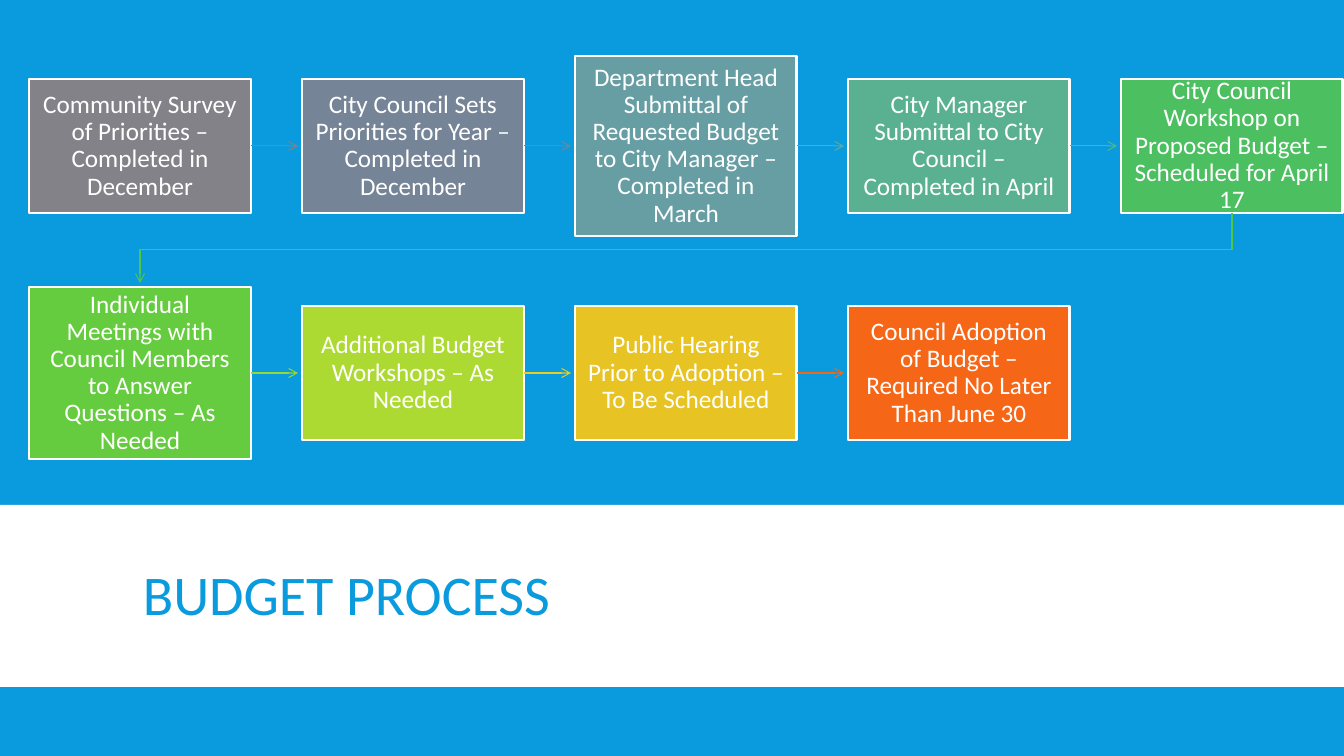
"""Build the budget process flow slide."""
from dataclasses import dataclass
from itertools import pairwise

from lxml.etree import SubElement
from pptx import Presentation
from pptx.dml.color import RGBColor
from pptx.enum.shapes import MSO_CONNECTOR, MSO_SHAPE
from pptx.enum.text import MSO_ANCHOR, PP_ALIGN
from pptx.oxml.ns import qn
from pptx.util import Pt

SCALE = 12192000 / 1344


@dataclass(frozen=True)
class Theme:
    font: str = "Calibri"
    blue: str = "099BDD"
    white: str = "FFFFFF"
    title_size: int = 40
    step_size: int = 18
    border: float = 2
    arrow: float = 0.75


def px(n):
    return round(n * SCALE)


def rgb(color):
    return RGBColor.from_string(color)


class Deck:
    """Hold the theme and the current slide, and draw each kind of element."""

    def __init__(self, prs, theme):
        self.theme = theme
        self.s = prs.slides.add_slide(prs.slide_layouts[6])
        fill = self.s.background.fill
        fill.solid()
        fill.fore_color.rgb = rgb(theme.blue)

    def set_text(self, sp, text, size, color, align, spacing):
        tf = sp.text_frame
        tf.word_wrap = True
        tf.vertical_anchor = MSO_ANCHOR.MIDDLE
        p = tf.paragraphs[0]
        p.text = text
        p.alignment = align
        p.line_spacing = spacing
        p.font.name = self.theme.font
        p.font.size = Pt(size)
        p.font.color.rgb = rgb(color)
        return tf

    def panel(self, x, y, w, h, color):
        sp = self.s.shapes.add_shape(MSO_SHAPE.RECTANGLE, px(x), px(y), px(w), px(h))
        sp.shadow.inherit = False
        sp.fill.solid()
        sp.fill.fore_color.rgb = rgb(color)
        sp.line.fill.background()
        return sp

    def step(self, x, y, w, h, color, text):
        t = self.theme
        sp = self.panel(x, y, w, h, color)
        sp.line.color.rgb = rgb(t.white)
        sp.line.width = Pt(t.border)
        tf = self.set_text(sp, text, t.step_size, t.white, PP_ALIGN.CENTER, 0.9)
        tf.margin_left = tf.margin_right = tf.margin_top = tf.margin_bottom = px(11)
        return sp

    def title(self, x, y, w, h, text):
        t = self.theme
        sp = self.s.shapes.add_textbox(px(x), px(y), px(w), px(h))
        self.set_text(sp, text, t.title_size, t.blue, PP_ALIGN.LEFT, 0.85)

    def arrowhead(self, line, color):
        line.color.rgb = rgb(color)
        line.width = Pt(self.theme.arrow)
        SubElement(line._get_or_add_ln(), qn("a:tailEnd"), type="arrow")

    def arrow(self, box, x1, x2, y, color):
        c = self.s.shapes.add_connector(
            MSO_CONNECTOR.STRAIGHT, px(x1), px(y), px(x2), px(y))
        c.begin_connect(box, 3)
        self.arrowhead(c.line, color)
        SubElement(c._element.spPr, qn("a:effectLst"))

    def bent_arrow(self, points, color):
        fb = self.s.shapes.build_freeform(*points[0], scale=SCALE)
        fb.add_line_segments(points[1:], close=False)
        sp = fb.convert_to_shape()
        sp.shadow.inherit = False
        sp.fill.background()
        self.arrowhead(sp.line, color)


LEFT, PITCH, BOX_W, BOX_H, GAP = 29, 273, 222, 134, 4
ROWS = [
    (146, [
        ("Community Survey of Priorities – Completed in December", "828288", BOX_H),
        ("City Council Sets Priorities for Year – Completed in December",
         "758496", BOX_H),
        ("Department Head Submittal of Requested Budget to City Manager – "
         "Completed in March", "679EA3", 180),
        ("City Manager Submittal to City Council – Completed in April",
         "5AB191", BOX_H),
        ("City Council Workshop on Proposed Budget – Scheduled for April 17",
         "4CBF61", BOX_H),
    ], ["828288", "738698", "63A7A5", "54B77F"]),
    (373, [
        ("Individual Meetings with Council Members to Answer Questions – As Needed",
         "66CC3F", 172),
        ("Additional Budget Workshops – As Needed", "ADDA32", BOX_H),
        ("Public Hearing Prior to Adoption – To Be Scheduled", "E7C324", BOX_H),
        ("Council Adoption of Budget – Required No Later Than June 30",
         "F56617", BOX_H),
    ], ["96D635", "E6CE26", "F56617"]),
]


def main():
    prs = Presentation()
    prs.slide_width, prs.slide_height = px(1344), px(756)
    deck = Deck(prs, Theme())
    deck.panel(0, 505, 1344, 182, deck.theme.white)
    deck.title(133, 515, 1079, 166, "BUDGET PROCESS")

    for mid, steps, arrows in ROWS:
        xs = [LEFT + i * PITCH for i in range(len(steps))]
        boxes = [deck.step(x, mid - h // 2, BOX_W, h, color, text)
                 for x, (text, color, h) in zip(xs, steps)]
        for box, (x, following), color in zip(boxes, pairwise(xs), arrows):
            deck.arrow(box, x + BOX_W, following - GAP, mid, color)

    first, last = LEFT + BOX_W // 2, LEFT + 4 * PITCH + BOX_W // 2
    deck.bent_arrow([(last, 213), (last, 250), (first, 250), (first, 283)], "4FC745")
    prs.save("out.pptx")


if __name__ == "__main__":
    main()
